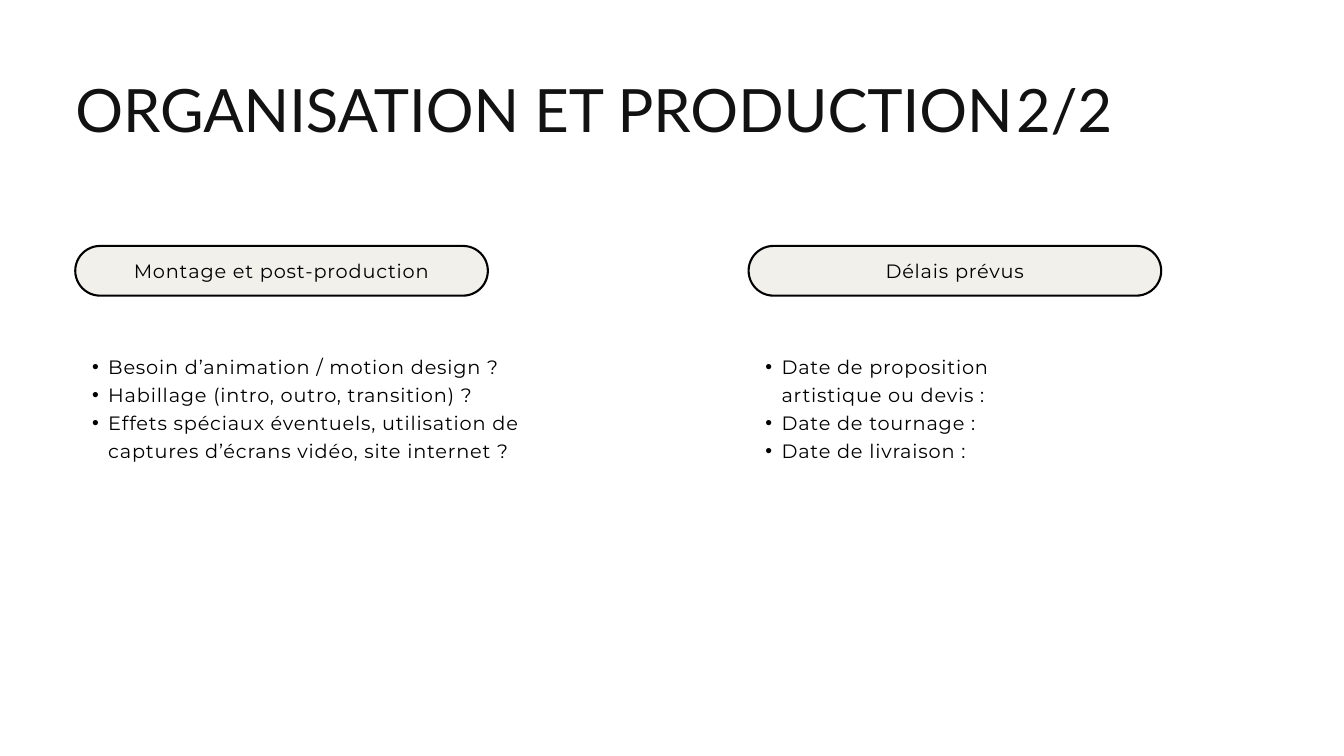
import dataclasses

import pptx
import pptx.dml.color
import pptx.enum.shapes
import pptx.enum.text
import pptx.oxml.ns
import pptx.util
from lxml import etree

Inches = pptx.util.Inches
Pt = pptx.util.Pt
Align = pptx.enum.text.PP_ALIGN
Anchor = pptx.enum.text.MSO_ANCHOR


@dataclasses.dataclass(frozen=True)
class Theme:
    title_font: str = "Lato"
    body_font: str = "Montserrat"
    title_size: float = 64
    body_size: float = 20.7
    body_line: float = 30
    body_tracking: float = 0.9
    title_color: str = "121212"
    ink: str = "000000"
    pill_fill: str = "F1F0EA"
    pill_line: float = 2.25


def add_child(parent, tag, **attributes):
    child = etree.SubElement(parent, pptx.oxml.ns.qn(tag))
    for name, value in attributes.items():
        child.set(name, str(value))
    return child


def write_text(paragraph, text, *, font, size, color, line, tracking=0,
               align=Align.LEFT, bullet=False, tab=None):
    properties = paragraph._p.get_or_add_pPr()
    properties.set("marL", str(Inches(0.49) if bullet else 0))
    properties.set("indent", str(Inches(-0.24) if bullet else 0))
    if bullet:
        add_child(properties, "a:buFont", typeface="Arial")
        add_child(properties, "a:buChar", char="•")
    else:
        add_child(properties, "a:buNone")
    if tab is not None:
        tabs = add_child(properties, "a:tabLst")
        add_child(tabs, "a:tab", pos=Inches(tab), algn="l")
    paragraph.alignment = align
    paragraph.line_spacing = Pt(line)
    paragraph.space_before = paragraph.space_after = Pt(0)
    run = paragraph.add_run()
    run.text = text
    run.font.name = font
    run.font.size = Pt(size)
    run.font.color.rgb = pptx.dml.color.RGBColor.from_string(color)
    if tracking:
        run._r.get_or_add_rPr().set("spc", str(round(tracking * 100)))


class SlideBuilder:
    def __init__(self, slide, theme):
        self.slide = slide
        self.theme = theme
        self.body_format = dict(font=theme.body_font, size=theme.body_size,
                                color=theme.ink, line=theme.body_line,
                                tracking=theme.body_tracking)

    def prepare_frame(self, shape, anchor=Anchor.TOP, bottom=0):
        frame = shape.text_frame
        frame.word_wrap = True
        frame.auto_size = pptx.enum.text.MSO_AUTO_SIZE.NONE
        frame.vertical_anchor = anchor
        frame.margin_left = frame.margin_right = frame.margin_top = 0
        frame.margin_bottom = Inches(bottom)
        return frame

    def place(self, shape, left, top, width, height):
        shape.left, shape.top = Inches(left), Inches(top)
        shape.width, shape.height = Inches(width), Inches(height)

    def title(self, text, left, top, width, height, tab):
        shape = self.slide.shapes.title
        self.place(shape, left, top, width, height)
        theme = self.theme
        write_text(self.prepare_frame(shape).paragraphs[0], text,
                   font=theme.title_font, size=theme.title_size,
                   color=theme.title_color, line=theme.title_size, tab=tab)

    def pill(self, text, left, top, width, height):
        shape = self.slide.shapes.add_shape(
            pptx.enum.shapes.MSO_SHAPE.ROUNDED_RECTANGLE,
            Inches(left), Inches(top), Inches(width), Inches(height))
        shape.adjustments[0] = 0.5
        shape.shadow.inherit = False
        shape.fill.solid()
        shape.fill.fore_color.rgb = pptx.dml.color.RGBColor.from_string(self.theme.pill_fill)
        shape.line.color.rgb = pptx.dml.color.RGBColor.from_string(self.theme.ink)
        shape.line.width = Pt(self.theme.pill_line)
        frame = self.prepare_frame(shape, Anchor.MIDDLE, bottom=0.08)
        write_text(frame.paragraphs[0], text, align=Align.CENTER, **self.body_format)

    def bullets(self, placeholder_index, items, left, top, width, height):
        shape = self.slide.placeholders[placeholder_index]
        self.place(shape, left, top, width, height)
        frame = self.prepare_frame(shape)
        for number, item in enumerate(items):
            paragraph = frame.add_paragraph() if number else frame.paragraphs[0]
            write_text(paragraph, item, bullet=True, **self.body_format)


COLUMNS = [
    (1.12, 7.15, "Montage et post-production", [
        "Besoin d’animation / motion design ?",
        "Habillage (intro, outro, transition) ?",
        "Effets spéciaux éventuels, utilisation de captures d’écrans vidéo, site internet ?",
    ]),
    (11.14, 4.5, "Délais prévus", [
        "Date de proposition artistique ou devis :",
        "Date de tournage :",
        "Date de livraison :",
    ]),
]


def main():
    presentation = pptx.Presentation()
    presentation.slide_width = Inches(20)
    presentation.slide_height = Inches(11.25)
    two_content = presentation.slide_layouts[3]
    builder = SlideBuilder(presentation.slides.add_slide(two_content), Theme())

    builder.title("ORGANISATION ET PRODUCTION\t2/2", 1.12, 1.26, 17.75, 0.94, tab=14.6)
    for index, (left, list_width, heading, items) in enumerate(COLUMNS, start=1):
        builder.pill(heading, left, 3.66, 6.14, 0.74)
        builder.bullets(index, items, left, 5.22, list_width, 2.06)

    presentation.save("out.pptx")


if __name__ == "__main__":
    main()
